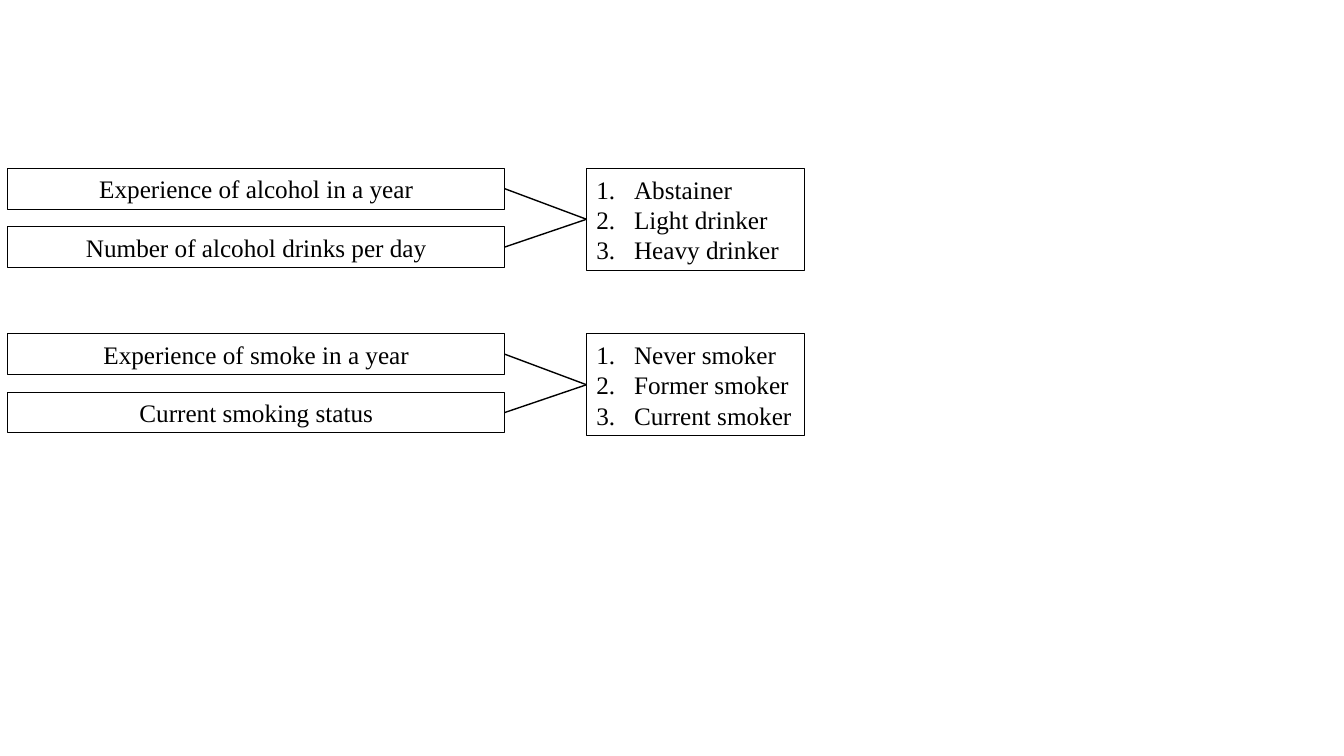
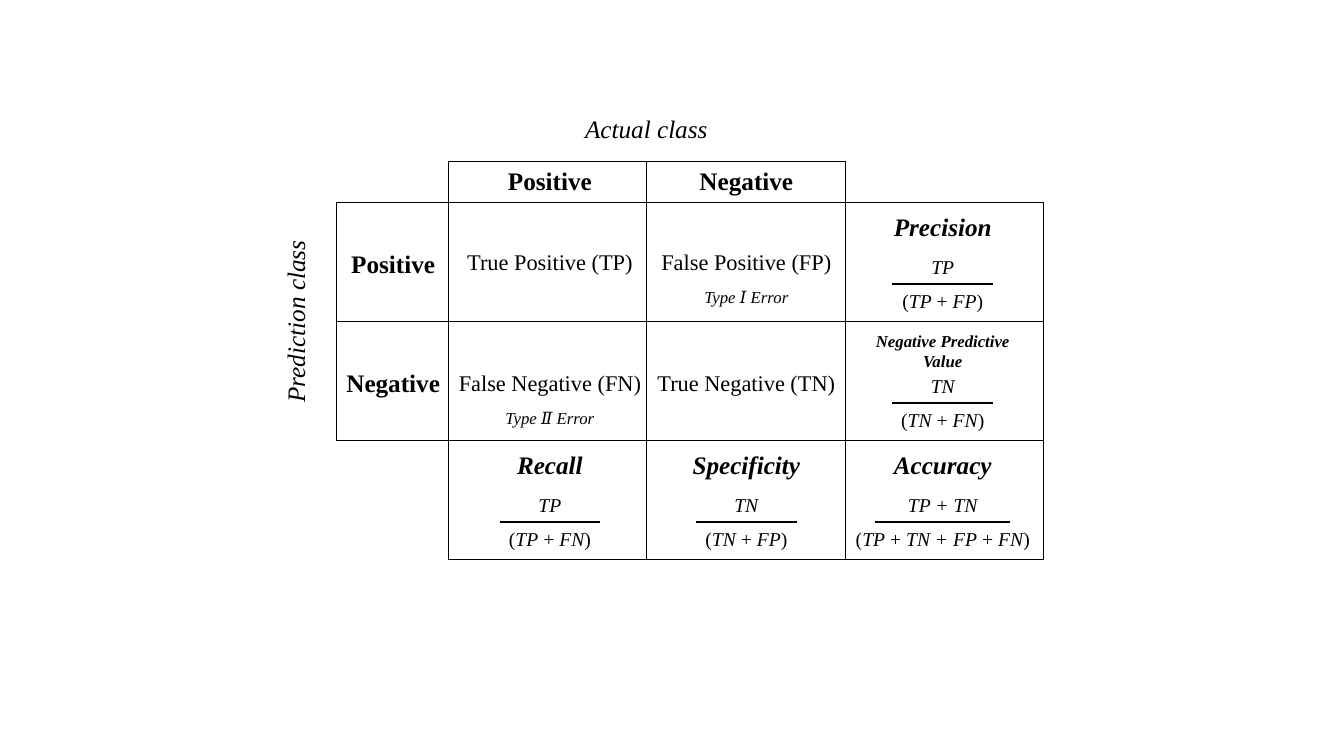
"""Build two slides: survey coding rules and a confusion matrix."""
from dataclasses import dataclass

from lxml import etree
from pptx import Presentation
from pptx.dml.color import RGBColor
from pptx.enum.shapes import MSO_CONNECTOR, MSO_SHAPE
from pptx.enum.text import MSO_AUTO_SIZE, PP_ALIGN
from pptx.oxml.ns import qn
from pptx.util import Cm, Pt

RECT = MSO_SHAPE.RECTANGLE
LINE = MSO_CONNECTOR.STRAIGHT
GROW = MSO_AUTO_SIZE.SHAPE_TO_FIT_TEXT
LEFT, MID = PP_ALIGN.LEFT, PP_ALIGN.CENTER


@dataclass(frozen=True)
class Theme:
    """Hold the font, ink, type sizes and line widths."""
    font: str = "Times New Roman"
    ink: str = "000000"
    head: int = 18
    body: int = 16
    math: int = 14
    note: int = 12
    edge: float = 0.75
    link: float = 1
    bar: float = 1.5
    grid: float = 0.5


THEME = Theme()
INK = RGBColor.from_string(THEME.ink)

GROUPS = [
    (["Experience of alcohol in a year", "Number of alcohol drinks per day"],
     ["Abstainer", "Light drinker", "Heavy drinker"]),
    (["Experience of smoke in a year", "Current smoking status"],
     ["Never smoker", "Former smoker", "Current smoker"]),
]
CLASSES = ["Positive", "Negative"]
CELLS = [["True Positive (TP)", "False Positive (FP)"],
         ["False Negative (FN)", "True Negative (TN)"]]
ERRORS = [("Type Ⅰ Error", 0, 1), ("Type Ⅱ Error", 1, 0)]
RATES = [
    ("Precision", 0, 2, "TP", ["TP", "FP"]),
    ("Negative Predictive Value", 1, 2, "TN", ["TN", "FN"]),
    ("Recall", 2, 0, "TP", ["TP", "FN"]),
    ("Specificity", 2, 1, "TN", ["TN", "FP"]),
    ("Accuracy", 2, 2, "TP + TN", ["TP", "TN + FP", "FN"]),
]

GRID_X, GRID_Y, COL, ROW = 11.3, 5.1, 5, 3
SIDE, TOP = 2.82, 1.04


def add_run(para, text, size, bold=False, italic=False):
    """Append one styled run to a paragraph."""
    run = para.add_run()
    run.text = text
    font = run.font
    font.name, font.size, font.bold, font.italic = THEME.font, Pt(size), bold, italic
    font.color.rgb = INK


def number(para):
    """Number a paragraph with a hanging indent."""
    props = para._p.get_or_add_pPr()
    props.set("marL", str(Cm(0.95)))
    props.set("indent", str(-Cm(0.95)))
    etree.SubElement(props, qn("a:buFont"), typeface="+mj-lt")
    etree.SubElement(props, qn("a:buAutoNum"), type="arabicPeriod")


def add_box(slide, x, y, w, h, lines, listed=False):
    """Draw an outlined box of centred or numbered lines."""
    box = slide.shapes.add_shape(RECT, Cm(x), Cm(y), Cm(w), Cm(h))
    box.shadow.inherit = False
    box.fill.background()
    box.line.color.rgb = INK
    box.line.width = Pt(THEME.edge)
    frame = box.text_frame
    frame.word_wrap = True
    frame.auto_size = GROW
    for i, text in enumerate(lines):
        para = frame.add_paragraph() if i else frame.paragraphs[0]
        para.alignment = LEFT if listed else MID
        if listed:
            number(para)
        add_run(para, text, THEME.head)
    return box


def add_line(slide, x, y, end_x, end_y, width):
    """Draw a straight line without a shadow."""
    line = slide.shapes.add_connector(LINE, Cm(x), Cm(y), Cm(end_x), Cm(end_y))
    line.line.color.rgb = INK
    line.line.width = Pt(width)
    etree.SubElement(line._element.spPr, qn("a:effectLst"))
    return line


def add_label(slide, mid, y, runs, size, bold=False, w=5.9, turn=0):
    """Place centred text, given as (text, italic) runs, around a middle."""
    high = size * 0.0423 + 0.26
    box = slide.shapes.add_textbox(Cm(mid - w / 2), Cm(y), Cm(w), Cm(high))
    box.rotation = turn
    frame = box.text_frame
    frame.word_wrap = True
    frame.auto_size = GROW
    para = frame.paragraphs[0]
    para.alignment = MID
    for text, italic in runs:
        add_run(para, text, size, bold, italic)


def add_ratio(slide, mid, y, upper, terms):
    """Draw a fraction around its bar."""
    half = 1.7 if len(terms) > 2 else 1.27
    lower = [("(", False)]
    for i, term in enumerate(terms):
        lower += [(" + ", False)] * bool(i) + [(term, True)]
    lower.append((")", False))
    add_label(slide, mid, y - 0.86, [(upper, True)], THEME.math)
    add_label(slide, mid, y, lower, THEME.math)
    add_line(slide, mid - half, y, mid + half, y, THEME.bar)


def add_grid(slide, x, y, cols, rows, sides):
    """Add an empty table ruled on the given cell sides."""
    shape = slide.shapes.add_table(len(rows), len(cols), Cm(x), Cm(y),
                                   Cm(sum(cols)), Cm(sum(rows)))
    table = shape.table
    table.first_row = table.horz_banding = False
    for col, w in zip(table.columns, cols):
        col.width = Cm(w)
    for row, h in zip(table.rows, rows):
        row.height = Cm(h)
    for cell in table.iter_cells():
        props = cell._tc.get_or_add_tcPr()
        for side in "LRTB":
            line = etree.SubElement(props, qn("a:ln" + side), w=str(Pt(THEME.grid)))
            if side in sides:
                fill = etree.SubElement(line, qn("a:solidFill"))
                etree.SubElement(fill, qn("a:srgbClr"), val=THEME.ink)
            else:
                etree.SubElement(line, qn("a:noFill"))
        cell.fill.background()


def build_groups(slide):
    """Link each pair of questions to its coded answers."""
    for i, (asks, codes) in enumerate(GROUPS):
        y = 4.24 + 4.17 * i
        target = add_box(slide, 14.78, y, 5.49, 2.57, codes, listed=True)
        for j, ask in enumerate(asks):
            box = add_box(slide, 0.2, y + 1.47 * j, 12.52, 1.03, [ask])
            link = add_line(slide, 0, 0, 1, 1, THEME.link)
            link.begin_connect(box, 3)
            link.end_connect(target, 1)


def build_matrix(slide):
    """Draw the confusion matrix with its rates."""
    mids = [13.86 + 4.95 * i for i in range(3)]
    add_grid(slide, GRID_X - SIDE, GRID_Y, [SIDE], [ROW] * 2, "LTB")
    add_grid(slide, GRID_X, GRID_Y - TOP, [COL] * 2, [TOP], "LTR")
    add_grid(slide, GRID_X, GRID_Y, [COL] * 3, [ROW] * 3, "LRTB")
    add_label(slide, 16.29, 2.72, [("Actual class", True)], THEME.head)
    add_label(slide, 7.44, 7.59, [("Prediction class", True)], THEME.head, turn=270)
    for i, name in enumerate(CLASSES):
        add_label(slide, mids[i], 4.05, [(name, False)], THEME.head, True)
        add_label(slide, 9.91, 6.12 + ROW * i, [(name, False)], THEME.head, True)
        for mid, text in zip(mids, CELLS[i]):
            add_label(slide, mid, 6.12 + 3.05 * i, [(text, False)], THEME.body)
    for text, row, col in ERRORS:
        add_label(slide, mids[col], 7.09 + 3.05 * row, [(text, True)], THEME.note)
    for name, row, col, upper, terms in RATES:
        y = GRID_Y + ROW * row
        size = THEME.note if " " in name else THEME.head
        add_label(slide, mids[col], y + 0.1, [(name, True)], size, True, w=3.94)
        add_ratio(slide, mids[col], y + 2.06, upper, terms)


def main():
    """Build and save the deck."""
    deck = Presentation()
    deck.slide_width, deck.slide_height = Cm(33.87), Cm(19.05)
    for build in (build_groups, build_matrix):
        build(deck.slides.add_slide(deck.slide_layouts[6]))
    deck.save("out.pptx")


if __name__ == "__main__":
    main()
